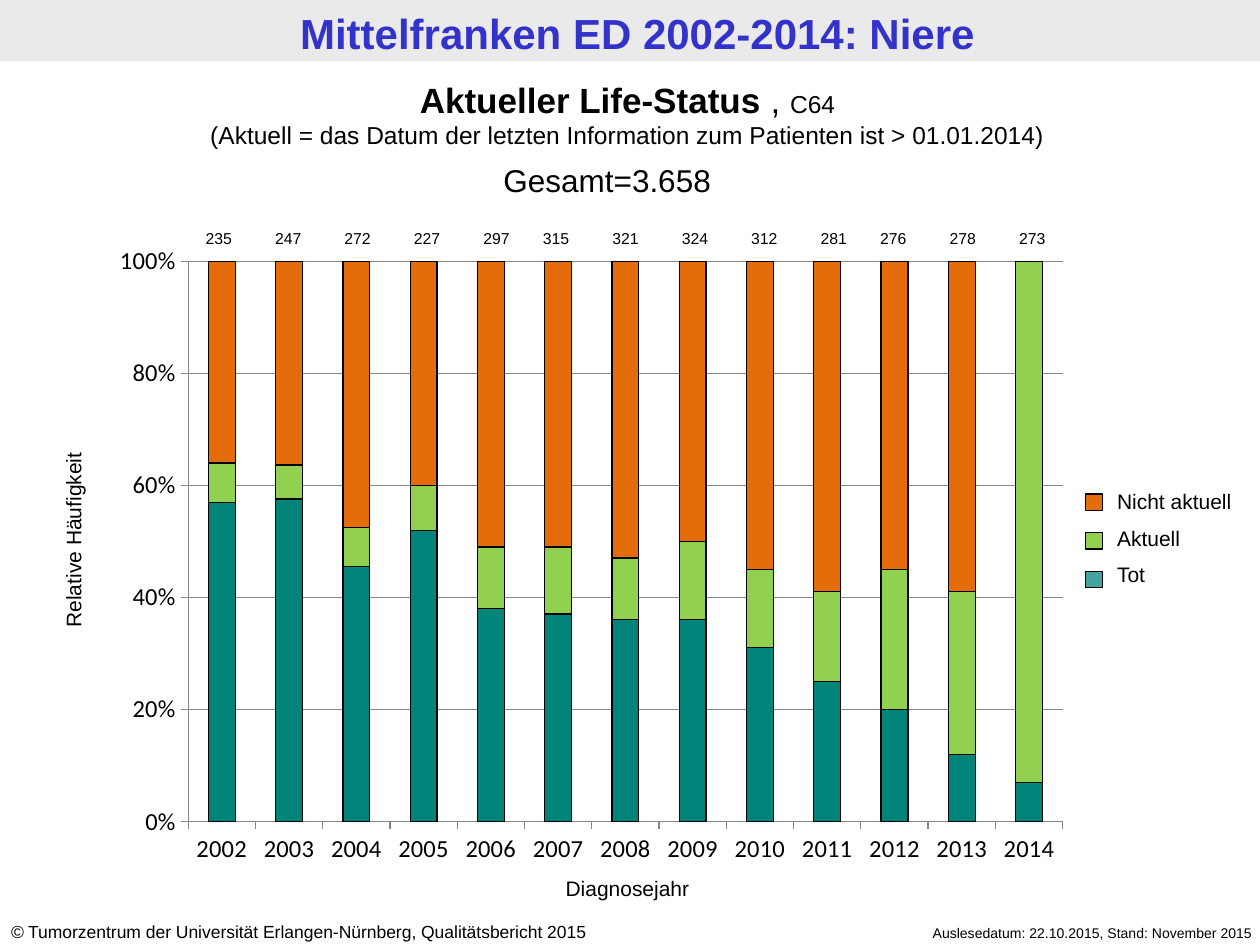
from dataclasses import dataclass
from lxml import etree
from pptx import Presentation
from pptx.chart import data as cd
from pptx.dml import color as dc
from pptx.enum import chart as ec, shapes as es, text as et
from pptx.oxml import ns
from pptx.util import Cm, Pt


@dataclass(frozen=True)
class Theme:
    ink: str = "000000"
    band: str = "EAEAEA"
    head: str = "3333CC"
    grid: str = "868686"
    dead: str = "008378"
    key: str = "008380"
    live: str = "92D050"
    old: str = "E46C0A"
    font: str = "Arial"
    num: str = "Calibri"
    h1: int = 24
    h2: int = 20
    h3: int = 18
    sub: int = 14
    body: int = 12
    foot: int = 10
    count: int = 9
    note: int = 8


T = Theme()
LEFT, MID, RIGHT = et.PP_ALIGN.LEFT, et.PP_ALIGN.CENTER, et.PP_ALIGN.RIGHT
YEARS = [str(y) for y in range(2002, 2015)]
COUNTS = [235, 247, 272, 227, 297, 315, 321, 324, 312, 281, 276, 278, 273]
SERIES = [
    ("Tot", T.dead, [57, 57, 46, 52, 38, 37, 36, 36, 31, 25, 20, 12, 7]),
    ("Aktuell", T.live, [7, 6, 7, 8, 11, 12, 11, 14, 14, 16, 25, 29, 93]),
    ("Nicht aktuell", T.old, [36, 36, 48, 40, 51, 51, 53, 50, 55, 59, 55, 59, 0]),
]


def rgb(code):
    return dc.RGBColor.from_string(code)


def paint(part, fill, line=None):
    part.fill.solid()
    part.fill.fore_color.rgb = rgb(fill)
    if line:
        part.line.color.rgb = rgb(line)
        part.line.width = Pt(0.75)
    else:
        part.line.fill.background()


def rect(slide, box, fill, line=None):
    shape = slide.shapes.add_shape(es.MSO_SHAPE.RECTANGLE, *map(Cm, box))
    shape.shadow.inherit = False
    paint(shape.fill and shape, fill, line)
    return shape


def write(slide, box, paras, align=LEFT, gap=0):
    """Each paragraph is a list of runs: (words, size, optional font traits)."""
    shape = slide.shapes.add_textbox(*map(Cm, box))
    frame = shape.text_frame
    frame.word_wrap = True
    for i, runs in enumerate(paras):
        para = frame.add_paragraph() if i else frame.paragraphs[0]
        para.alignment = align
        if i:
            para.space_before = Pt(gap)
        for words, size, *traits in runs:
            run = para.add_run()
            run.text = words
            font = run.font
            font.name, font.size = T.font, Pt(size)
            font.color.rgb = rgb(T.ink)
            for name in traits:
                setattr(font, name, True)
    return shape


def header(slide, box):
    x, y, w, h = box
    rect(slide, box, T.band)
    title = write(slide, (x + 0.15, y + 0.03, w, h),
                  [[("Mittelfranken ED 2002-2014: Niere", T.h1, "bold")]], MID)
    title.text_frame.paragraphs[0].runs[0].font.color.rgb = rgb(T.head)


def intro(slide, box):
    x, y, w, h = box
    write(slide, (x, y, w, 1.7), [
        [("Aktueller Life-Status ", T.h2, "bold"), (", ", T.h2), ("C64", T.sub)],
        [("(Aktuell = das Datum der letzten Information zum Patienten ist"
          " > 01.01.2014)", T.sub)],
    ], MID)
    write(slide, (x + 10, y + 1.68, 5.6, h - 1.68), [[("Gesamt=3.658", T.h3)]])


def place(plot, x, y, w, h):
    """Fix the inner plot area as fractions of the chart."""
    area = plot._element.getparent()
    for old in area.findall(ns.qn("c:layout")):
        area.remove(old)
    layout = etree.Element(ns.qn("c:layout"))
    manual = etree.SubElement(layout, ns.qn("c:manualLayout"))
    marks = dict(layoutTarget="inner", xMode="edge", yMode="edge", x=x, y=y, w=w, h=h)
    for tag, val in marks.items():
        etree.SubElement(manual, ns.qn("c:" + tag)).set("val", str(val))
    area.insert(0, layout)


def bars(slide, box):
    data = cd.CategoryChartData(number_format="0")
    data.categories = YEARS
    for name, _, vals in SERIES:
        data.add_series(name, vals)
    kind = ec.XL_CHART_TYPE.COLUMN_STACKED_100
    chart = slide.shapes.add_chart(kind, *map(Cm, box), data).chart
    chart.has_legend = chart.has_title = False
    chart.font.name, chart.font.size = T.num, Pt(T.sub)
    chart.font.color.rgb = rgb(T.ink)

    plot = chart.plots[0]
    plot.gap_width, plot.overlap = 150, 100
    plot.vary_by_categories = False
    for series, (_, fill, _) in zip(plot.series, SERIES):
        paint(series.format, fill, T.ink)
    place(plot, 0.09, 0.04, 0.89, 0.87)

    cats, vals = chart.category_axis, chart.value_axis
    vals.has_major_gridlines = True
    vals.minimum_scale, vals.maximum_scale, vals.major_unit = 0, 1, 0.2
    vals.tick_labels.number_format = "0%"
    vals.tick_labels.number_format_is_linked = False
    for axis in (cats, vals):
        axis.major_tick_mark = ec.XL_TICK_MARK.OUTSIDE
        axis.minor_tick_mark = ec.XL_TICK_MARK.NONE
        axis.tick_labels.font.size = Pt(T.sub)
    for part in (cats, vals, vals.major_gridlines):
        part.format.line.color.rgb = rgb(T.grid)
        part.format.line.width = Pt(0.75)


def counts(slide, box):
    """Case numbers in a row; every fifth one moves closer to its neighbour."""
    x, y, w, h = box
    for i, n in enumerate(COUNTS):
        left = x + i * w - i // 5 * 0.2
        write(slide, (left, y, w, h), [[(str(n), T.count)]], MID)


def labels(slide, box):
    x, y, w, h = box
    side = write(slide, (x - 3.58, y + 5.74, 6.12, 0.79),
                 [[("Relative Häufigkeit", T.body)]], MID)
    side.rotation = 270
    write(slide, (x + 7.78, y + h - 0.2, 5.72, 0.79),
          [[("Diagnosejahr", T.body)]], MID)


def legend(slide, box):
    x, y, w, h = box
    names = [[(name, T.body)] for name, _, _ in reversed(SERIES)]
    write(slide, (x + 0.38, y, w - 0.38, h), names, gap=6.5)
    for i, fill in enumerate((T.old, T.live, T.key)):
        mark = rect(slide, (x, y + 0.23 + i * 0.78, 0.33, 0.33), fill, T.ink)
    tone = mark._element.spPr.find(".//" + ns.qn("a:srgbClr"))
    etree.SubElement(tone, ns.qn("a:alpha")).set("val", "74000")


def footer(slide, box):
    x, y, w, h = box
    write(slide, (x, y, 13.3, h), [[
        ("©", T.foot, "italic"),
        (" Tumorzentrum der Universität Erlangen-Nürnberg, Qualitätsbericht 2015",
         T.foot)]])
    write(slide, (x + w - 8.6, y + 0.08, 8.6, h - 0.08),
          [[("Auslesedatum: 22.10.2015, Stand: November 2015", T.note)]], RIGHT)


def main():
    deck = Presentation()
    deck.slide_width, deck.slide_height = Cm(25.4), Cm(19.05)
    slide = deck.slides.add_slide(deck.slide_layouts[6])
    graph = (2.01, 4.75, 19.81, 12.98)
    header(slide, (0, 0, 25.4, 1.24))
    footer(slide, (-0.03, 18.44, 25.53, 0.69))
    bars(slide, graph)
    labels(slide, graph)
    counts(slide, (3.71, 4.48, 1.4, 0.64))
    legend(slide, (21.89, 9.73, 3.51, 2.31))
    intro(slide, (-0.1, 1.45, 25.5, 2.7))
    deck.save("out.pptx")


if __name__ == "__main__":
    main()
